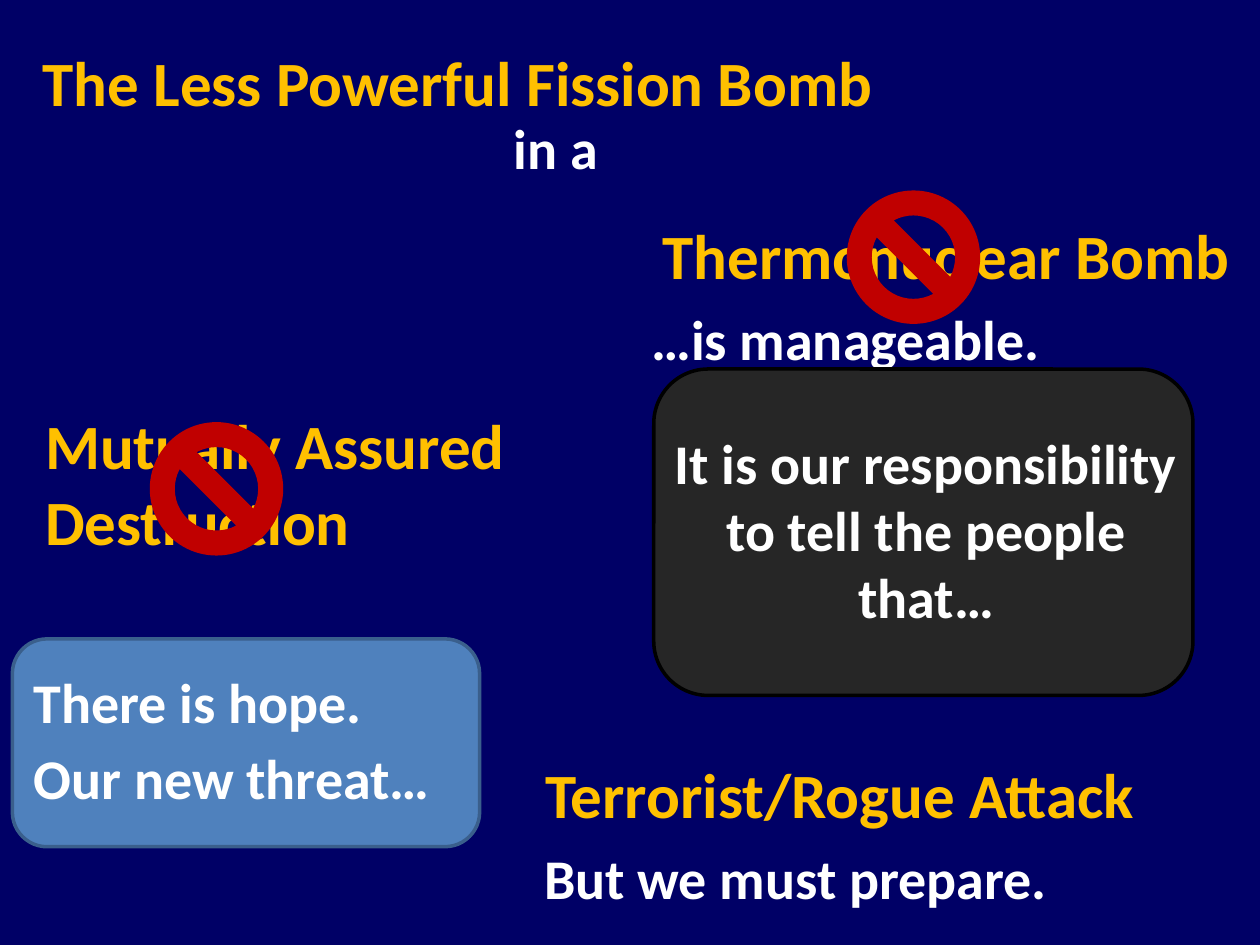
import pptx
import pptx.util
import pptx.dml.color
import pptx.enum.shapes
import pptx.enum.text

Cm = pptx.util.Cm
Pt = pptx.util.Pt
RGBColor = pptx.dml.color.RGBColor
KIND = pptx.enum.shapes.MSO_SHAPE
ALIGN = pptx.enum.text.PP_ALIGN

NAVY = RGBColor(0x00, 0x00, 0x66)
GOLD = RGBColor(0xFF, 0xC0, 0x00)
WHITE = RGBColor(0xFF, 0xFF, 0xFF)
BLUE = RGBColor(0x4F, 0x81, 0xBD)
STEEL = RGBColor(0x3A, 0x5F, 0x8C)
COAL = RGBColor(0x26, 0x26, 0x26)
BLACK = RGBColor(0x00, 0x00, 0x00)
RED = RGBColor(0xC0, 0x00, 0x00)

deck = pptx.Presentation()
deck.slide_width = Cm(25.4)
deck.slide_height = Cm(19.05)
slide = deck.slides.add_slide(deck.slide_layouts[6])
slide.background.fill.solid()
slide.background.fill.fore_color.rgb = NAVY


def add_text(text, left, top, width, height=1.62, size=32, color=WHITE,
             align=ALIGN.LEFT, wrap=True):
    box = slide.shapes.add_textbox(Cm(left), Cm(top), Cm(width), Cm(height))
    frame = box.text_frame
    frame.word_wrap = wrap
    frame.auto_size = pptx.enum.text.MSO_AUTO_SIZE.SHAPE_TO_FIT_TEXT
    par = frame.paragraphs[0]
    par.alignment = align
    run = par.add_run()
    run.text = text
    run.font.name = "Calibri"
    run.font.size = Pt(size)
    run.font.bold = True
    run.font.color.rgb = color


def add_shape(kind, left, top, width, height, fill, line=None):
    shape = slide.shapes.add_shape(kind, Cm(left), Cm(top), Cm(width), Cm(height))
    shape.shadow.inherit = False
    shape.fill.solid()
    shape.fill.fore_color.rgb = fill
    if line is None:
        shape.line.fill.background()
    else:
        shape.line.color.rgb = line
        shape.line.width = Pt(2)


# Panel behind the hopeful lines
add_shape(KIND.ROUNDED_RECTANGLE, 0.25, 12.88, 9.42, 4.19, BLUE, STEEL)

# Gold headings
for text, left, top, width, height in (
    ("Thermonuclear Bomb", 13.11, 4.24, 12.24, 1.8),
    ("The Less Powerful Fission Bomb", 0.61, 0.76, 18.69, 1.8),
    ("Mutually Assured Destruction", 0.66, 8.08, 12.24, 3.33),
    ("Terrorist/Rogue Attack", 10.74, 15.11, 14.66, 1.8),
):
    add_text(text, left, top, width, height, size=36, color=GOLD)

# White remarks
for text, left, top, width in (
    ("There is hope.", 0.43, 13.34, 10.11),
    ("Our new threat…", 0.43, 14.86, 10.11),
    ("But we must prepare.", 10.72, 16.87, 14.12),
    ("…is manageable.", 12.88, 6.02, 10.11),
):
    add_text(text, left, top, width)
add_text("in a", 10.11, 2.16, 2.24, wrap=False)

# Signs that strike out the old threats
for left, top in ((17.07, 3.84), (3.02, 8.51)):
    add_shape(KIND.NO_SYMBOL, left, top, 2.69, 2.69, RED)

# Dark panel with the call to act
add_shape(KIND.ROUNDED_RECTANGLE, 13.18, 7.44, 10.87, 6.58, COAL, BLACK)
add_text("It is our responsibility to tell the people that…",
         13.16, 8.51, 11.02, 4.37, align=ALIGN.CENTER)

deck.save("out.pptx")
